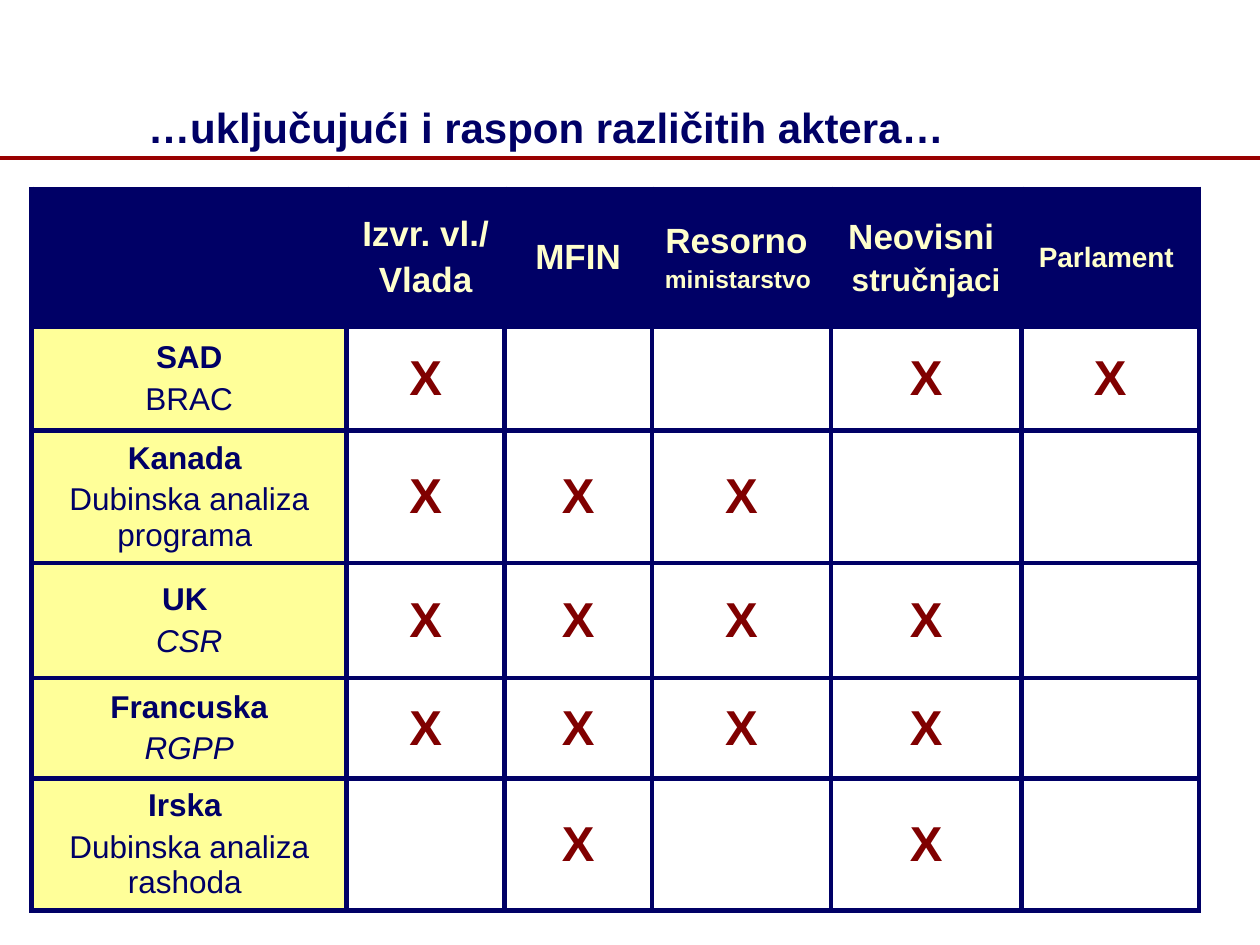
from dataclasses import dataclass

from lxml.etree import SubElement
from pptx import Presentation
from pptx.dml.color import RGBColor
from pptx.enum.shapes import MSO_CONNECTOR as Connector
from pptx.enum.text import MSO_ANCHOR as Anchor, PP_ALIGN as Align
from pptx.oxml.ns import qn
from pptx.util import Cm, Pt

NAVY, CREAM, YELLOW, RED, MAROON = "000066", "FFFFCC", "FFFF99", "990000", "800000"


@dataclass(frozen=True)
class Line:
    text: str
    size: float
    color: str = NAVY
    bold: bool = True
    italic: bool = False


@dataclass(frozen=True)
class Country:
    name: str
    review: str
    actors: str  # one mark per actor column, "-" for none
    height: float
    italic: bool = False


HEADER_HEIGHT = 2.77
COLUMN_WIDTHS = [6.35, 3.18, 2.97, 3.61, 3.84, 3.58]
ACTORS = [
    [("Izvr. vl./", 20), ("Vlada", 20)],
    [("MFIN", 20)],
    [("Resorno ", 20), ("ministarstvo ", 14)],
    [("Neovisni ", 20), ("stručnjaci", 18)],
    [("Parlament ", 16)],
]
COUNTRIES = [
    Country("SAD", "BRAC", "X--XX", 2.1),
    Country("Kanada ", "Dubinska analiza programa ", "XXX--", 2.52),
    Country("UK ", "CSR", "XXXX-", 2.32, italic=True),
    Country("Francuska", "RGPP", "XXXX-", 2.02, italic=True),
    Country("Irska ", "Dubinska analiza rashoda ", "-X-X-", 2.52),
]


def rgb(color: str) -> RGBColor:
    return RGBColor.from_string(color)


def write_lines(frame, lines: list[Line]) -> None:
    """Write one centred paragraph per line, spaced by 20 % of its size."""
    for index, line in enumerate(lines):
        para = frame.add_paragraph() if index else frame.paragraphs[0]
        para.alignment = Align.CENTER
        if index:
            para.space_before = Pt(line.size * 0.2)
        span = para.add_run()
        span.text = line.text
        font = span.font
        font.name, font.size = "Arial", Pt(line.size)
        font.bold, font.italic = line.bold, line.italic
        font.color.rgb = rgb(line.color)


def add_borders(cell, color: str, width: float) -> None:
    """Draw all four borders; they must precede the fill in the cell's XML."""
    properties = cell._tc.get_or_add_tcPr()
    for index, side in enumerate(("lnL", "lnR", "lnT", "lnB")):
        border = SubElement(properties, qn(f"a:{side}"), w=str(Pt(width)))
        properties.insert(index, border)
        solid = SubElement(border, qn("a:solidFill"))
        SubElement(solid, qn("a:srgbClr"), val=color)


def fill_cell(cell, lines: list[Line], fill: str | None = None) -> None:
    cell.vertical_anchor = Anchor.MIDDLE
    add_borders(cell, NAVY, 3)
    if fill:
        cell.fill.solid()
        cell.fill.fore_color.rgb = rgb(fill)
    else:
        cell.fill.background()
    write_lines(cell.text_frame, lines)


def add_title(page, text: str) -> None:
    box = page.shapes.add_textbox(Cm(0), Cm(0.2), Cm(22.02), Cm(2.98))
    frame = box.text_frame
    frame.word_wrap = True
    frame.vertical_anchor = Anchor.BOTTOM
    write_lines(frame, [Line(text, 24)])


def add_rule(page, width: int) -> None:
    rule = page.shapes.add_connector(Connector.STRAIGHT, 0, Cm(3.18), width, Cm(3.18))
    rule.line.color.rgb = rgb(RED)
    rule.line.width = Pt(2.25)
    SubElement(rule._element.spPr, qn("a:effectLst"))


def add_actor_table(page) -> None:
    heights = [HEADER_HEIGHT] + [country.height for country in COUNTRIES]
    table = page.shapes.add_table(
        len(heights), len(COLUMN_WIDTHS), Cm(0.64), Cm(3.81),
        Cm(sum(COLUMN_WIDTHS)), Cm(sum(heights)),
    ).table
    table.first_row = table.horz_banding = False
    for column, width in zip(table.columns, COLUMN_WIDTHS):
        column.width = Cm(width)
    for row, height in zip(table.rows, heights):
        row.height = Cm(height)

    fill_cell(table.cell(0, 0), [], NAVY)
    for column, actor in enumerate(ACTORS, start=1):
        lines = [Line(text, size, CREAM) for text, size in actor]
        fill_cell(table.cell(0, column), lines, NAVY)
    for row, country in enumerate(COUNTRIES, start=1):
        review = Line(country.review, 18, bold=False, italic=country.italic)
        fill_cell(table.cell(row, 0), [Line(country.name, 18), review], YELLOW)
        for column, mark in enumerate(country.actors, start=1):
            lines = [Line(mark, 28, MAROON)] if mark == "X" else []
            fill_cell(table.cell(row, column), lines)


def main() -> None:
    deck = Presentation()
    deck.slide_width, deck.slide_height = Cm(25.4), Cm(19.05)
    page = deck.slides.add_slide(deck.slide_layouts[6])
    add_rule(page, deck.slide_width)
    add_title(page, "…uključujući i raspon različitih aktera…")
    add_actor_table(page)
    deck.save("out.pptx")


if __name__ == "__main__":
    main()
